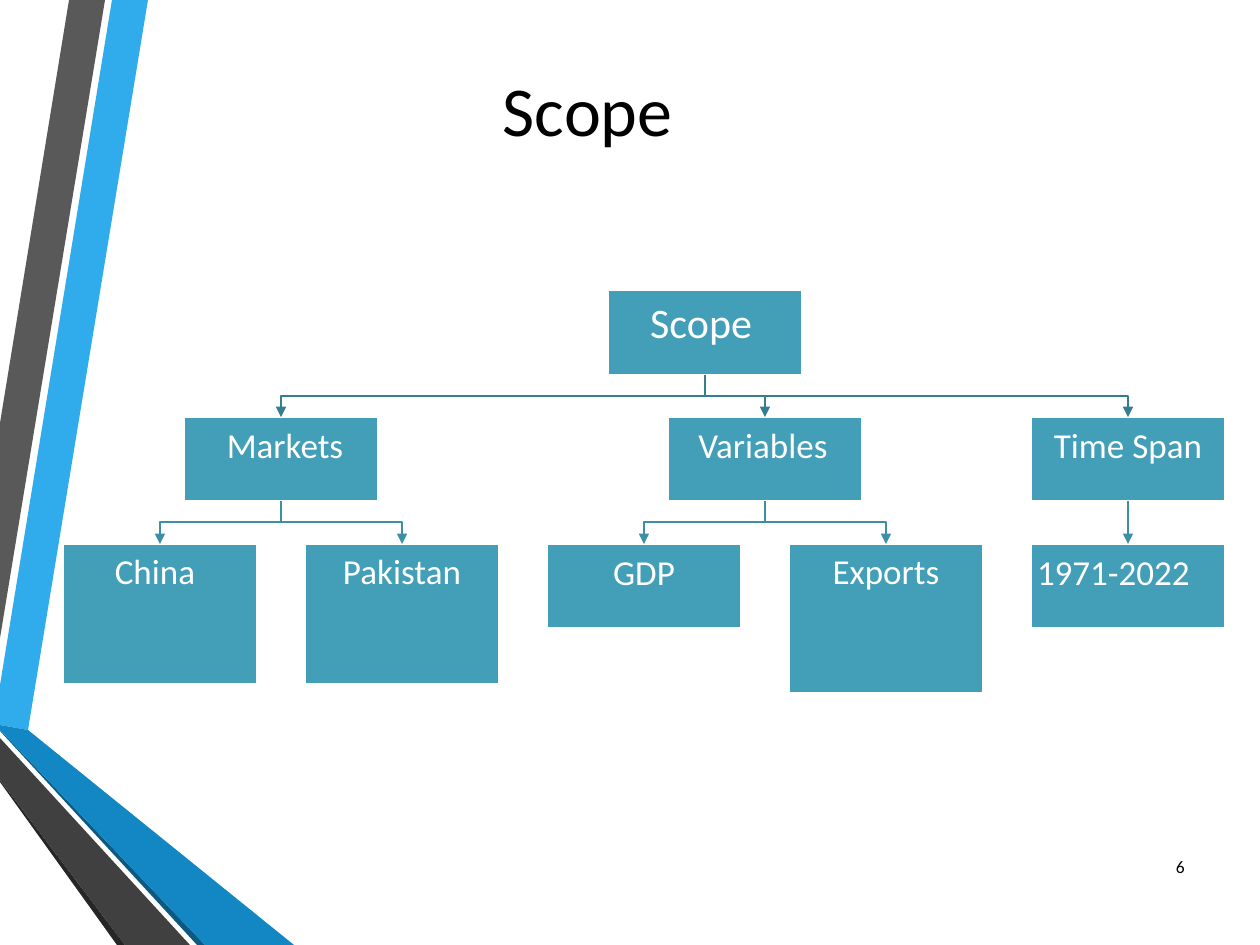
from dataclasses import dataclass

import lxml.etree
import pptx
import pptx.dml.color
import pptx.enum.shapes
import pptx.enum.text
import pptx.oxml.ns
import pptx.util

EMU_PER_PX = 914400 / 126
PAGE_WIDTH, PAGE_HEIGHT = 1260, 945
FONT = "Calibri"
COLOURS = {
    "black": "000000", "white": "FFFFFF", "teal": "439EB7",
    "upper_link": "357D91", "lower_link": "3D8FA5",
    "sky": "30ACEC", "blue": "1287C3", "navy": "0C5A82",
    "grey": "595959", "charcoal": "404040", "soot": "262626",
}
ALIGN = pptx.enum.text.PP_ALIGN
ANCHOR = pptx.enum.text.MSO_ANCHOR

# Chart grid: columns and rows at equal steps
FIRST_LEFT, COLUMN_STEP = 63, 242
FIRST_TOP, ROW_STEP = 290, 127
NODE_WIDTH, NODE_HEIGHT = 194, 84
INSET = 6


@dataclass
class Band:
    colour: str
    points: list[tuple[int, int]]


@dataclass
class Node:
    text: str
    column: float
    row: int
    parent: str = ""
    height: int = NODE_HEIGHT
    size: int = 20
    shift: int = 0
    align: ALIGN = ALIGN.CENTER

    @property
    def left(self) -> int:
        return round(FIRST_LEFT + self.column * COLUMN_STEP)

    @property
    def top(self) -> int:
        return FIRST_TOP + self.row * ROW_STEP

    @property
    def centre(self) -> int:
        return self.left + NODE_WIDTH // 2


BANDS = [
    Band("sky", [(0, 685), (0, 725), (28, 730), (148, 0), (112, 0)]),
    Band("grey", [(105, 0), (69, 0), (0, 423), (0, 638)]),
    Band("soot", [(0, 780), (0, 782), (117, 945), (125, 945)]),
    Band("navy", [(0, 730), (0, 731), (197, 945), (205, 945)]),
    Band("blue", [(0, 730), (205, 945), (294, 945), (28, 730), (0, 725)]),
    Band("charcoal", [(0, 780), (125, 945), (190, 945), (0, 738)]),
]
NODES = [
    Node("Scope", 2.25, 0, height=85, size=24, shift=-4),
    Node("Markets", 0.5, 1, "Scope", shift=4),
    Node("Variables", 2.5, 1, "Scope", shift=-2),
    Node("Time Span", 4, 1, "Scope"),
    Node("China", 0, 2, "Markets", height=140, shift=-5),
    Node("Pakistan", 1, 2, "Markets", height=140),
    Node("GDP", 2, 2, "Variables"),
    Node("Exports", 3, 2, "Variables", height=149),
    Node("1971-2022", 4, 2, "Time Span", align=ALIGN.LEFT),
]


def px(length: float) -> pptx.util.Emu:
    return pptx.util.Emu(round(length * EMU_PER_PX))


def rgb(name: str) -> pptx.dml.color.RGBColor:
    return pptx.dml.color.RGBColor.from_string(COLOURS[name])


def write(box, text: str, size: int, colour: str, align, anchor) -> None:
    frame = box.text_frame
    frame.word_wrap = True
    frame.vertical_anchor = anchor
    para = frame.paragraphs[0]
    para.text = text
    para.alignment = align
    para.font.name = FONT
    para.font.size = pptx.util.Pt(size)
    para.font.color.rgb = rgb(colour)


def add_outline(page, points: list[tuple[int, int]], close: bool):
    builder = page.shapes.build_freeform(*points[0], scale=EMU_PER_PX)
    builder.add_line_segments(points[1:], close=close)
    shape = builder.convert_to_shape()
    shape.shadow.inherit = False
    return shape


def add_band(page, band: Band) -> None:
    shape = add_outline(page, band.points, close=True)
    shape.fill.solid()
    shape.fill.fore_color.rgb = rgb(band.colour)
    shape.line.fill.background()


def add_label(page, text: str, left: int, top: int, width: int, height: int,
              size: int, align):
    box = page.shapes.add_textbox(px(left), px(top), px(width), px(height))
    write(box, text, size, "black", align, ANCHOR.MIDDLE)
    return box


def add_node(page, node: Node):
    box = page.shapes.add_shape(
        pptx.enum.shapes.MSO_SHAPE.RECTANGLE,
        px(node.left), px(node.top), px(NODE_WIDTH), px(node.height))
    box.shadow.inherit = False
    box.fill.solid()
    box.fill.fore_color.rgb = rgb("teal")
    box.line.color.rgb = rgb("white")
    box.line.width = pptx.util.Pt(1)
    write(box, node.text, node.size, "white", node.align, ANCHOR.TOP)
    frame = box.text_frame
    frame.margin_top = frame.margin_bottom = px(INSET)
    frame.margin_left = px(INSET + max(0, 2 * node.shift))
    frame.margin_right = px(INSET + max(0, -2 * node.shift))
    return box


def style_arrow(arrow, colour: str) -> None:
    arrow.line.color.rgb = rgb(colour)
    arrow.line.width = pptx.util.Pt(1)
    line = arrow.element.spPr.find(pptx.oxml.ns.qn("a:ln"))
    lxml.etree.SubElement(line, pptx.oxml.ns.qn("a:tailEnd"), type="triangle")


def add_link(page, parent: Node, child: Node, boxes: dict) -> None:
    colour = "upper_link" if parent.row == 0 else "lower_link"
    start = parent.top + parent.height
    if parent.centre == child.centre:
        arrow = page.shapes.add_connector(
            pptx.enum.shapes.MSO_CONNECTOR.STRAIGHT,
            px(parent.centre), px(start), px(child.centre), px(child.top))
        arrow.begin_connect(boxes[parent.text], 2)
        arrow.end_connect(boxes[child.text], 0)
        style_arrow(arrow, colour)
        lxml.etree.SubElement(arrow.element.spPr, pptx.oxml.ns.qn("a:effectLst"))
    else:
        middle = (start + child.top) // 2
        arrow = add_outline(page, [
            (parent.centre, start), (parent.centre, middle),
            (child.centre, middle), (child.centre, child.top)], close=False)
        arrow.fill.background()
        style_arrow(arrow, colour)


def main() -> None:
    deck = pptx.Presentation()
    deck.slide_width, deck.slide_height = px(PAGE_WIDTH), px(PAGE_HEIGHT)
    page = deck.slides.add_slide(deck.slide_layouts[6])

    # Coloured bands along the left edge
    for band in BANDS:
        add_band(page, band)

    # Title, set slightly left of its box centre, and page number
    title = add_label(page, "Scope", 53, -10, 1086, 238, 40, ALIGN.CENTER)
    title.text_frame.margin_right = px(29)
    add_label(page, "6", 1138, 842, 59, 50, 10, ALIGN.RIGHT)

    # Hierarchy: boxes, then the arrows between them
    nodes = {node.text: node for node in NODES}
    boxes = {node.text: add_node(page, node) for node in NODES}
    for node in NODES:
        if node.parent:
            add_link(page, nodes[node.parent], node, boxes)

    deck.save("out.pptx")


if __name__ == "__main__":
    main()
